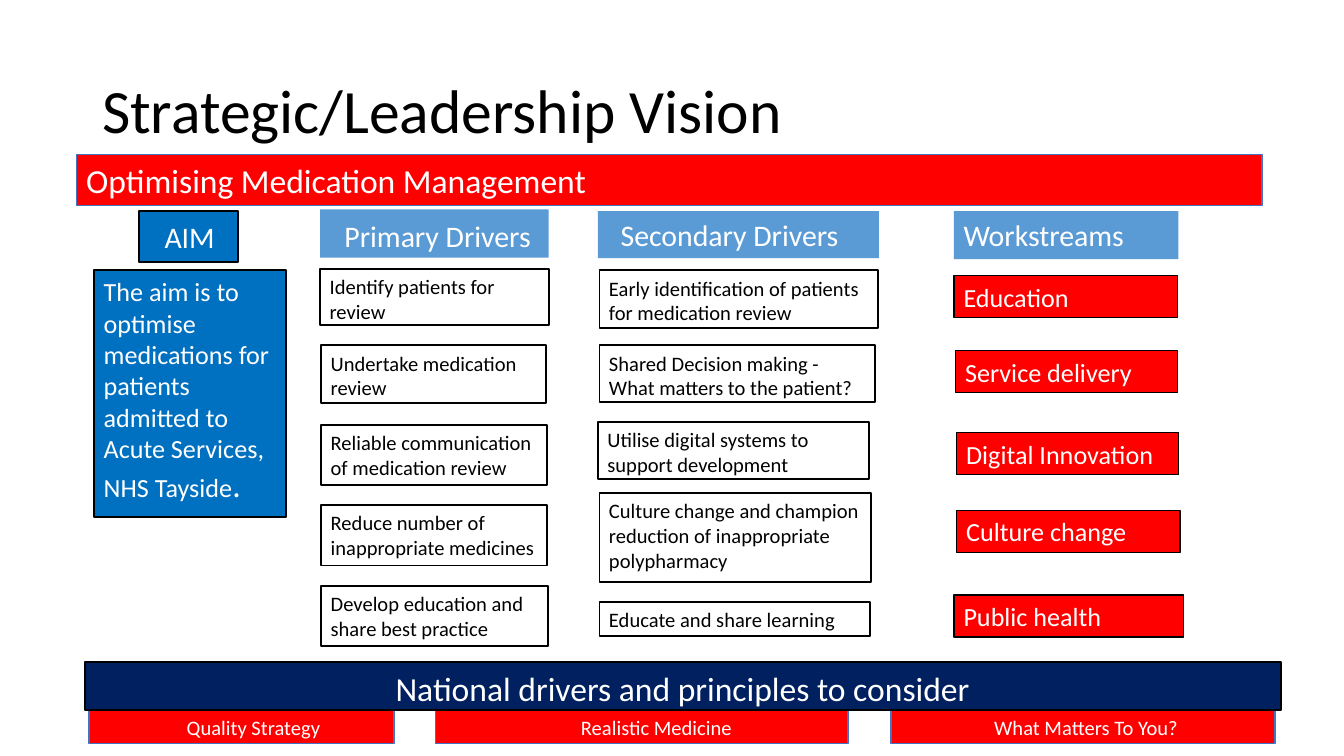
from pptx import Presentation
from pptx.dml.color import RGBColor
from pptx.enum.shapes import MSO_SHAPE as Shape
from pptx.enum.text import MSO_ANCHOR as Anchor, PP_ALIGN as Align
from pptx.util import Cm, Pt

WHITE, BLACK, RED = "FFFFFF", "000000", "FF0000"
BLUE, SKY, NAVY, EDGE = "0070C0", "5B9BD5", "002060", "4472C4"

HEADING = {"fill": SKY, "size": 16, "color": WHITE}
AIM = {"fill": BLUE, "line": BLACK, "color": WHITE}
DRIVER = {"fill": WHITE, "line": BLACK, "size": 11, "color": BLACK}
WORKSTREAM = {"fill": RED, "line": BLACK, "weight": 0.75, "size": 14, "color": WHITE}
BANNER = {"fill": RED, "line": EDGE, "weight": 0.75, "size": 18, "color": WHITE}
NATIONAL = {"fill": NAVY, "line": BLACK, "size": 18, "color": WHITE, "align": Align.CENTER}


def rgb(value):
    return RGBColor.from_string(value)


def set_format(target, values):
    for name, value in values.items():
        setattr(target, name, value)


def write(shape, paragraphs, size, color, left=0.18, top=0.1, anchor=Anchor.TOP, align=Align.LEFT):
    frame = shape.text_frame
    set_format(frame, {
        "word_wrap": True, "vertical_anchor": anchor,
        "margin_left": Cm(left), "margin_right": Cm(0.18),
        "margin_top": Cm(top), "margin_bottom": Cm(0.1),
    })
    for index, text in enumerate(paragraphs):
        paragraph = frame.add_paragraph() if index else frame.paragraphs[0]
        paragraph.alignment = align
        run = paragraph.add_run()
        run.text = text
        set_format(run.font, {"name": "Calibri", "size": Pt(size)})
        run.font.color.rgb = rgb(color)


def add_box(slide, box, text, fill, line=None, weight=1, **text_format):
    shape = slide.shapes.add_shape(Shape.RECTANGLE, *map(Cm, box))
    shape.shadow.inherit = False
    shape.fill.solid()
    shape.fill.fore_color.rgb = rgb(fill)
    if line:
        shape.line.color.rgb = rgb(line)
        shape.line.width = Pt(weight)
    else:
        shape.line.fill.background()
    write(shape, text.split("\n"), **text_format)
    return shape


def add_title(slide, box, text):
    shape = slide.shapes.add_textbox(*map(Cm, box))
    write(shape, [text], 33, BLACK, anchor=Anchor.MIDDLE)
    shape.text_frame.paragraphs[0].line_spacing = 0.9


def add_aim(slide, box, heading, text):
    left, top, width, height = box
    add_box(slide, (left + 0.84, top, 1.88, 0.97), heading, **AIM, size=16, left=0.49, top=0.15)
    body = add_box(slide, (left, top + 1.12, width, height - 1.12), text, **AIM, size=14)
    stop = body.text_frame.paragraphs[0].add_run()
    stop.text = "."
    set_format(stop.font, {"name": "Calibri", "size": Pt(18)})
    stop.font.color.rgb = rgb(WHITE)


def add_column(slide, box, heading, items, style, **heading_format):
    left, top, width, height = box
    add_box(slide, box, heading, **HEADING, **heading_format)
    for text, shift, drop, item_width, item_height in items:
        add_box(slide, (left + shift, top + drop, item_width, item_height), text, **style)


def add_footer(slide, box, heading, principles):
    left, top, width, height = box
    style = BANNER | {"size": 11}
    for text, shift, item_width, indent in principles:
        add_box(slide, (left + shift, top + 0.89, item_width, height - 0.89), text, **style, left=indent)
    add_box(slide, (left, top, width, 0.91), heading, **NATIONAL)


def main():
    presentation = Presentation()
    set_format(presentation, {"slide_width": Cm(25.4), "slide_height": Cm(14.29)})
    slide = presentation.slides.add_slide(presentation.slide_layouts[6])

    add_title(slide, (1.75, 0.76, 21.9, 2.77), "Strategic/Leadership Vision")
    add_box(slide, (1.45, 2.92, 22.4, 0.97), "Optimising Medication Management", **BANNER)
    add_aim(slide, (1.78, 3.99, 3.63, 5.79), "AIM",
            "The aim is to optimise medications for patients admitted to Acute Services, NHS Tayside")

    add_column(slide, (6.05, 3.96, 4.32, 0.91), "Primary Drivers", [
        ("Identify patients for review", 0, 1.12, 4.32, 1.07),
        ("Undertake medication review", 0.02, 2.57, 4.25, 1.09),
        ("Reliable communication of medication review", 0.02, 4.07, 4.27, 1.14),
        ("Reduce number of inappropriate medicines", 0.02, 5.59, 4.27, 1.14),
        ("Develop education and share best practice", 0.02, 7.11, 4.29, 1.14),
    ], DRIVER, left=0.46, top=0.15)

    add_column(slide, (11.3, 3.99, 5.31, 0.89), "Secondary Drivers", [
        ("Early identification of patients for medication review", 0.03, 1.12, 5.26, 1.09),
        ("Shared Decision making -\nWhat matters to the patient?", 0.03, 2.54, 5.21, 1.07),
        ("Utilise digital systems to support development", 0, 3.99, 5.13, 1.07),
        ("Culture change and champion reduction of inappropriate polypharmacy", 0.03, 5.33, 5.13, 1.68),
        ("Educate and share learning", 0.03, 7.39, 5.11, 0.64),
    ], DRIVER, left=0.43)

    add_column(slide, (18.03, 3.99, 4.24, 0.91), "Workstreams", [
        ("Education", 0, 1.22, 4.22, 0.79),
        ("Service delivery", 0.03, 2.64, 4.19, 0.79),
        ("Digital Innovation", 0.05, 4.19, 4.19, 0.79),
        ("Culture change", 0.05, 5.66, 4.22, 0.79),
        ("Public health", 0, 7.26, 4.34, 0.79),
    ], WORKSTREAM)

    add_footer(slide, (1.6, 12.52, 22.61, 1.53), "National drivers and principles to consider", [
        ("Quality Strategy", 0.08, 5.77, 1.85),
        ("Realistic Medicine", 6.63, 7.8, 2.75),
        ("What Matters To You?", 15.24, 7.26, 1.95),
    ])
    presentation.save("out.pptx")


if __name__ == "__main__":
    main()
